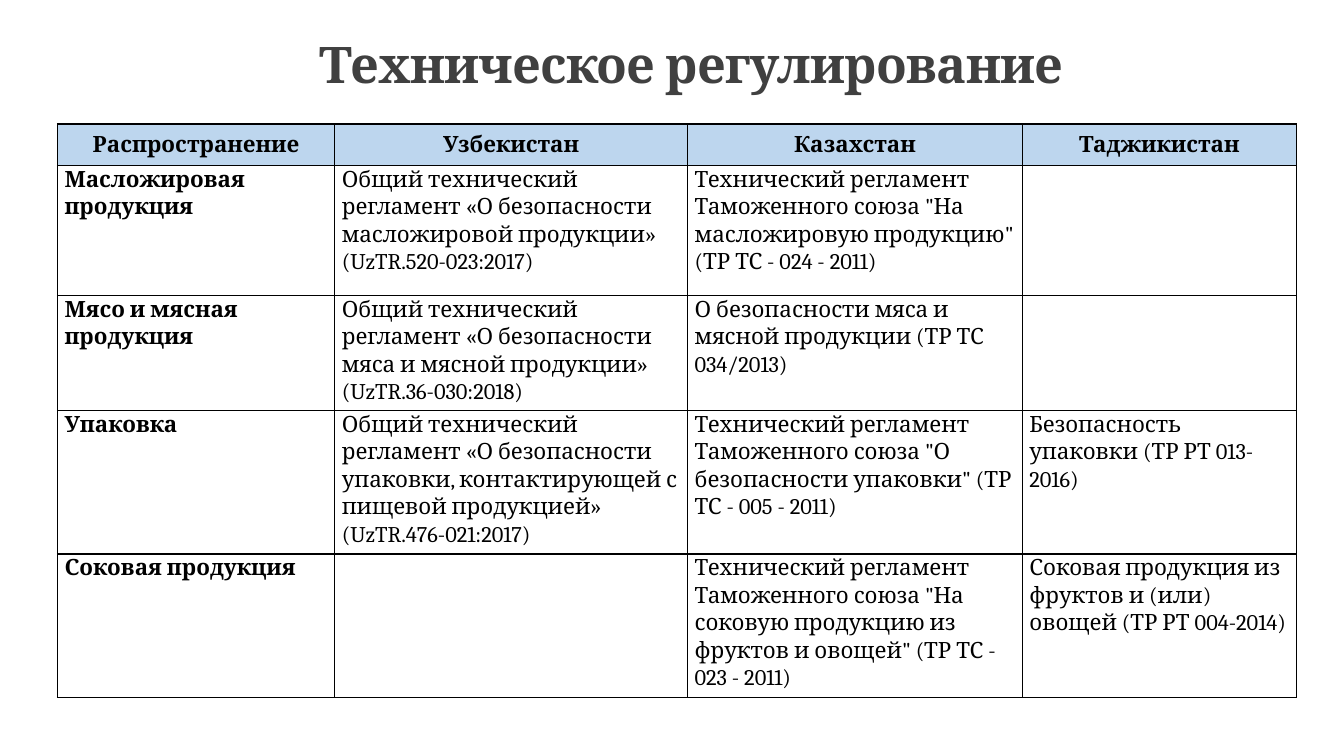
import pptx
import pptx.util
import pptx.dml.color
import pptx.enum.text
import lxml.etree
from dataclasses import dataclass

PX = 9144  # EMU, one hundredth of an inch
NS = "http://schemas.openxmlformats.org/drawingml/2006/main"
ALIGN = pptx.enum.text.PP_ALIGN
ANCHOR = pptx.enum.text.MSO_ANCHOR


@dataclass(frozen=True)
class Theme:
    font: str = "Cambria"
    ink: str = "000000"
    title: str = "404040"
    head: str = "BDD6EE"
    big: int = 36
    body: int = 16
    line: int = 1
    lead: float = 1.07
    pad: int = 7


COLS = [275, 350, 332, 272]
TALL = 129
ROWS = [41, TALL, 97, TALL, TALL]
CELLS = [
    ["Распространение", "Узбекистан", "Казахстан", "Таджикистан"],
    ["Масложировая продукция",
     "Общий технический регламент «О безопасности масложировой продукции» (UzTR.520-023:2017)",
     'Технический регламент Таможенного союза "На масложировую продукцию" (ТР ТС - 024 - 2011)',
     ""],
    ["Мясо и мясная продукция",
     "Общий технический регламент «О безопасности мяса и мясной продукции» (UzTR.36-030:2018)",
     "О безопасности мяса и мясной продукции (ТР ТС 034/2013)",
     ""],
    ["Упаковка",
     "Общий технический регламент «О безопасности упаковки, контактирующей с пищевой продукцией» (UzTR.476-021:2017)",
     'Технический регламент Таможенного союза "О безопасности упаковки" (ТР ТС - 005 - 2011)',
     "Безопасность упаковки (ТР РТ 013-2016)"],
    ["Соковая продукция",
     "",
     'Технический регламент Таможенного союза "На соковую продукцию из фруктов и овощей" (ТР ТС - 023 - 2011)',
     "Соковая продукция из фруктов и (или) овощей (ТР РТ 004-2014)"],
]


def px(num):
    return pptx.util.Emu(num * PX)


def rgb(code):
    return pptx.dml.color.RGBColor.from_string(code)


class Page:
    def __init__(self, slide, theme):
        self.slide = slide
        self.theme = theme

    def style(self, para, size, color, bold, align):
        para.alignment = align
        for run in para.runs:
            font = run.font
            font.name = self.theme.font
            font.size = pptx.util.Pt(size)
            font.bold = bold
            font.color.rgb = rgb(color)

    def title(self, text, left, top, width, height):
        box = self.slide.shapes.add_textbox(px(left), px(top), px(width), px(height))
        frame = box.text_frame
        frame.word_wrap = True
        frame.vertical_anchor = ANCHOR.BOTTOM
        frame.margin_top = frame.margin_bottom = 0
        frame.text = text
        para = frame.paragraphs[0]
        self.style(para, self.theme.big, self.theme.title, True, ALIGN.CENTER)
        para.runs[0]._r.get_or_add_rPr().set("spc", "-50")

    def edge(self, cell):
        """Draw the four borders of a cell; they must precede its fill."""
        props = cell._tc.get_or_add_tcPr()
        width = str(pptx.util.Pt(self.theme.line))
        for side in ("lnL", "lnR", "lnT", "lnB"):
            line = lxml.etree.SubElement(props, f"{{{NS}}}{side}", w=width)
            fill = lxml.etree.SubElement(line, f"{{{NS}}}solidFill")
            lxml.etree.SubElement(fill, f"{{{NS}}}srgbClr", val=self.theme.ink)

    def cell(self, cell, text, head, bold):
        theme = self.theme
        self.edge(cell)
        if head:
            cell.fill.solid()
            cell.fill.fore_color.rgb = rgb(theme.head)
        else:
            cell.fill.background()
        cell.margin_left = cell.margin_right = px(theme.pad)
        cell.margin_top = cell.margin_bottom = 0
        cell.vertical_anchor = ANCHOR.MIDDLE if head else ANCHOR.TOP
        if text:
            cell.text_frame.text = text
            para = cell.text_frame.paragraphs[0]
            para.line_spacing = theme.lead
            align = ALIGN.CENTER if head else ALIGN.LEFT
            self.style(para, theme.body, theme.ink, bold, align)

    def table(self, left, top, cols, rows, cells):
        frame = self.slide.shapes.add_table(
            len(rows), len(cols), px(left), px(top), px(sum(cols)), px(sum(rows)))
        grid = frame.table
        grid.horz_banding = False
        for col, width in zip(grid.columns, cols):
            col.width = px(width)
        for r, (row, height) in enumerate(zip(grid.rows, rows)):
            row.height = px(height)
            for c, text in enumerate(cells[r]):
                self.cell(grid.cell(r, c), text, r == 0, r == 0 or c == 0)


def main():
    deck = pptx.Presentation()
    deck.slide_width, deck.slide_height = px(1333), px(750)
    page = Page(deck.slides.add_slide(deck.slide_layouts[6]), Theme())
    page.title("Техническое регулирование", 136, 18, 1100, 75)
    page.table(57, 123, COLS, ROWS, CELLS)
    deck.save("out.pptx")


if __name__ == "__main__":
    main()
